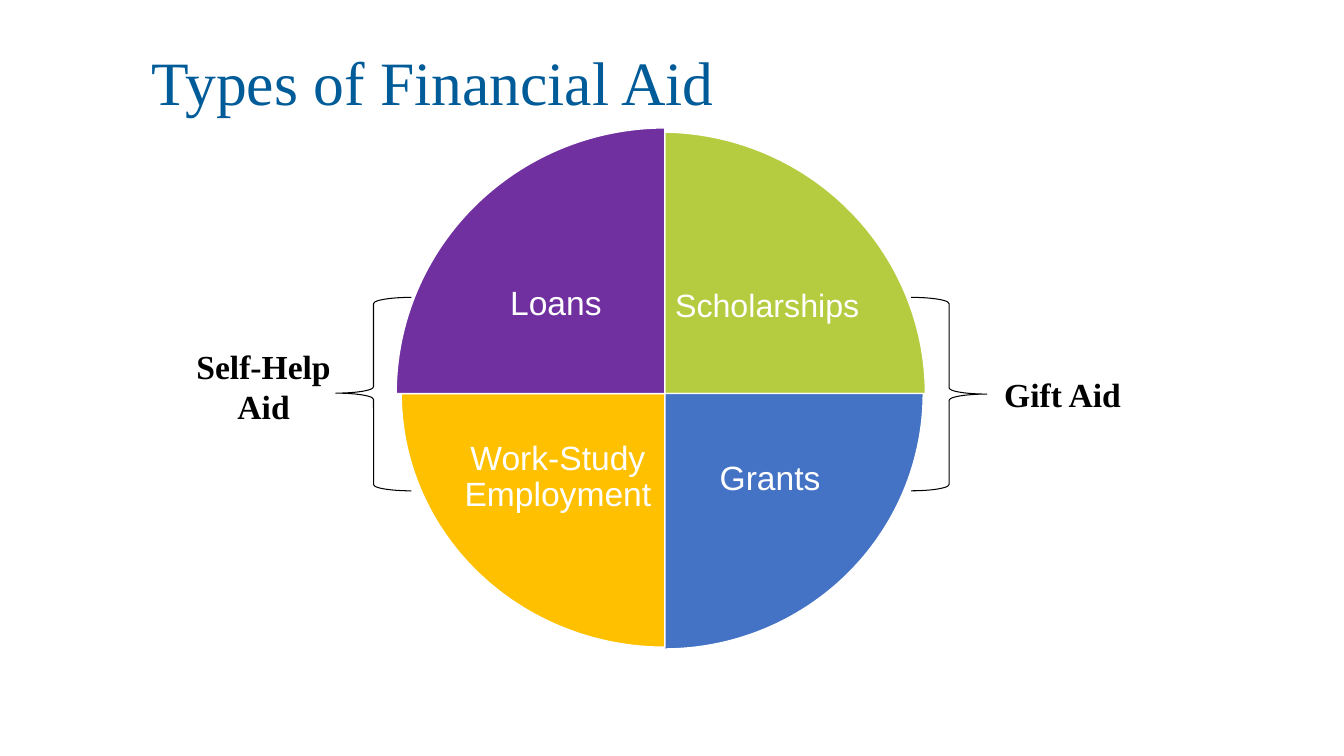
from pptx import Presentation
from pptx.dml.color import RGBColor
from pptx.enum.shapes import MSO_SHAPE
from pptx.enum.text import MSO_ANCHOR, MSO_AUTO_SIZE, PP_ALIGN
from pptx.util import Pt

COLORS = {
    "title": "005B99", "label": "FFFFFF", "aid": "000000",
    "scholarships": "B5CC40", "grants": "4472C4",
    "work_study": "FFC000", "loans": "7030A0",
}

prs = Presentation()
prs.slide_width, prs.slide_height = Pt(960), Pt(540)
slide = prs.slides.add_slide(prs.slide_layouts[6])


def add_text(text, box, color, font, frame, paragraph):
    text_frame = slide.shapes.add_textbox(*map(Pt, box)).text_frame
    text_frame.text = text
    first = text_frame.paragraphs[0]
    for target, values in ((text_frame, frame), (first, paragraph), (first.font, font)):
        for name, value in values.items():
            setattr(target, name, value)
    first.font.color.rgb = RGBColor.from_string(COLORS[color])


def add_outlined(kind, box, color, width, adjustments):
    outlined = slide.shapes.add_shape(kind, *map(Pt, box))
    outlined.shadow.inherit = False
    outlined.line.color.rgb = RGBColor.from_string(COLORS[color])
    outlined.line.width = Pt(width)
    for position, value in enumerate(adjustments):
        outlined.adjustments[position] = value
    return outlined


# Title
add_text("Types of Financial Aid", (101.5, 8.6, 828, 104.4), "title",
         {"name": "Times New Roman", "size": Pt(44)},
         {"word_wrap": True, "vertical_anchor": MSO_ANCHOR.MIDDLE},
         {"line_spacing": 0.9})

# Quarters of the pie, clockwise from the top
QUARTER = 54  # 90 degrees in adjustment units
FULL_TURN = 4 * QUARTER
quarters = [
    ("Scholarships", "scholarships", (283, 94.3, 378, 373.7),
     (476.6, 163.4, 139.7, 111.6), 23, PP_ALIGN.RIGHT),
    ("Grants", "grants", (289.4, 98.6, 370.1, 365),
     (481.7, 288, 136.8, 108.7), 24, PP_ALIGN.CENTER),
    ("Work-Study Employment", "work_study", (286.6, 100.1, 376.6, 362.2),
     (329, 287.3, 139, 108), 24, PP_ALIGN.CENTER),
    ("Loans", "loans", (283, 91.4, 383.8, 379.4),
     (326.2, 161.3, 141.8, 113), 24, PP_ALIGN.CENTER),
]
label_frame = {"word_wrap": True, "vertical_anchor": MSO_ANCHOR.MIDDLE}
label_frame.update({f"margin_{side}": Pt(2.2) for side in ("left", "top", "right", "bottom")})

for index, (name, color, pie_box, label_box, size, alignment) in enumerate(quarters):
    start = (3 + index) * QUARTER % FULL_TURN
    end = (start + QUARTER) % FULL_TURN
    quarter = add_outlined(MSO_SHAPE.PIE, pie_box, "label", 1, (start, end))
    quarter.fill.solid()
    quarter.fill.fore_color.rgb = RGBColor.from_string(COLORS[color])
    add_text(name, label_box, "label", {"name": "Arial", "size": Pt(size)}, label_frame,
             {"alignment": alignment, "line_spacing": 0.9})

# Braces and the kinds of aid they gather
aid_kinds = [
    ("Gift Aid", MSO_SHAPE.RIGHT_BRACE, 650.9, 0.5, (700.6, 263.5, 116.6, 36)),
    ("Self-Help Aid", MSO_SHAPE.LEFT_BRACE, 239.8, 0.495, (128.2, 243.4, 120.2, 65.5)),
]
for name, brace_kind, left, tip, aid_box in aid_kinds:
    brace = add_outlined(brace_kind, (left, 212.4, 54, 138.2), "aid", 0.75, (0.083, tip))
    brace.fill.background()
    add_text(name, aid_box, "aid",
             {"name": "Times New Roman", "size": Pt(24), "bold": True},
             {"word_wrap": True, "auto_size": MSO_AUTO_SIZE.SHAPE_TO_FIT_TEXT},
             {"alignment": PP_ALIGN.CENTER})

prs.save("out.pptx")
